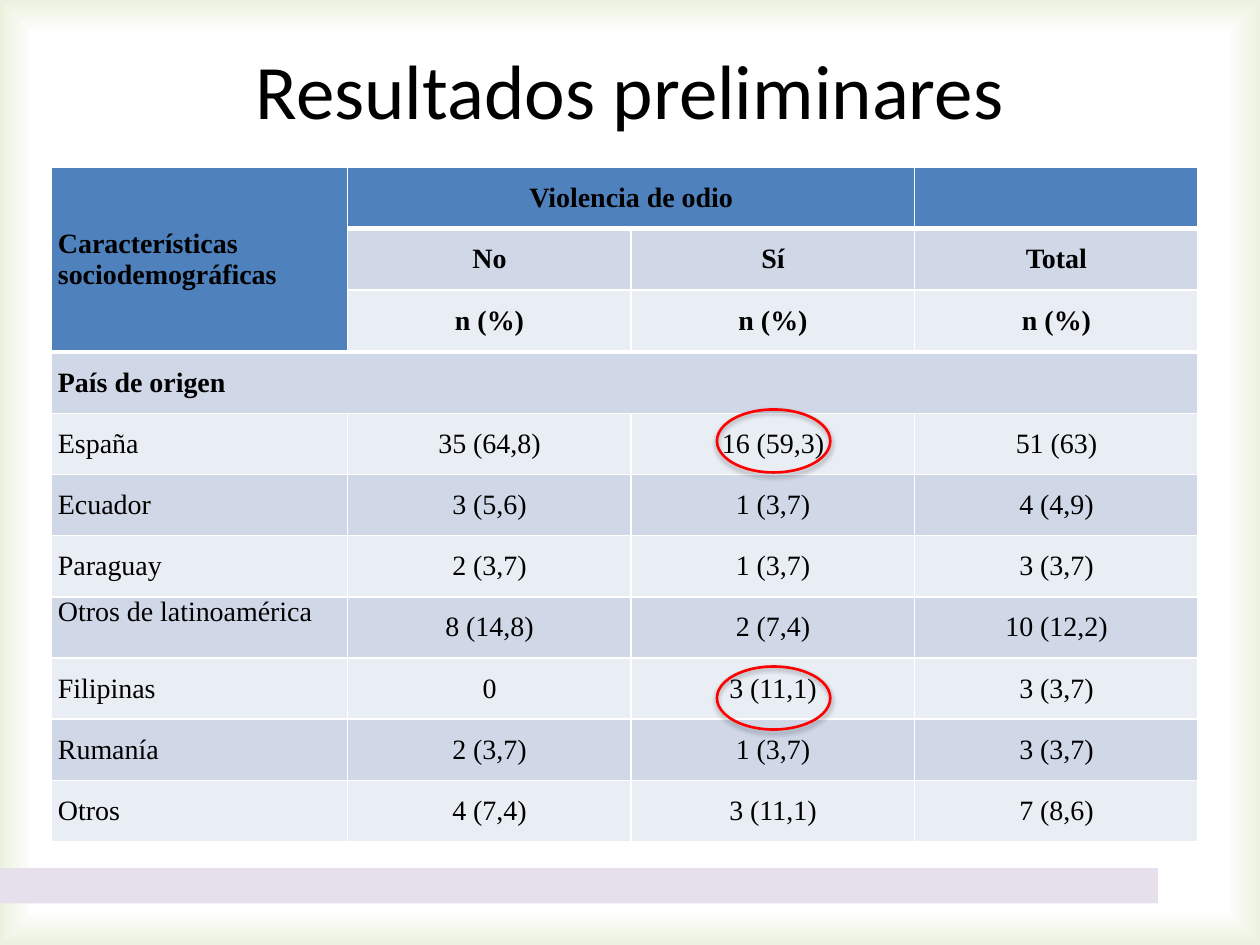
import dataclasses

import pptx
import pptx.dml.color
import pptx.enum.shapes
import pptx.enum.text
import pptx.oxml
import pptx.oxml.ns
import pptx.util

Inches = pptx.util.Inches
Pt = pptx.util.Pt
ALIGN = pptx.enum.text.PP_ALIGN
ANCHOR = pptx.enum.text.MSO_ANCHOR
SHAPE = pptx.enum.shapes.MSO_SHAPE
NS = pptx.oxml.ns.nsdecls("a")

HEAD, DARK, LIGHT = "4F81BD", "D0D8E8", "E9EDF4"
HEAD_ROWS = 3
WIDTHS = [2.35, 2.25, 2.25, 2.25]
ROWS = [
    ["Características sociodemográficas", "Violencia de odio", "", ""],
    ["", "No", "Sí", "Total"],
    ["", "n (%)", "n (%)", "n (%)"],
    ["País de origen", "", "", ""],
    ["España", "35 (64,8)", "16 (59,3)", "51 (63)"],
    ["Ecuador", "3 (5,6)", "1 (3,7)", "4 (4,9)"],
    ["Paraguay", "2 (3,7)", "1 (3,7)", "3 (3,7)"],
    ["Otros de latinoamérica", "8 (14,8)", "2 (7,4)", "10 (12,2)"],
    ["Filipinas", "0", "3 (11,1)", "3 (3,7)"],
    ["Rumanía", "2 (3,7)", "1 (3,7)", "3 (3,7)"],
    ["Otros", "4 (7,4)", "3 (11,1)", "7 (8,6)"],
]
TOP_ROW = 7  # the one row whose label sits at the top of its cell


@dataclasses.dataclass
class Ring:
    left: float
    top: float
    width: float = 0.9
    height: float = 0.5


RINGS = [Ring(5.69, 5.29), Ring(5.69, 3.25)]


def rgb(code: str) -> pptx.dml.color.RGBColor:
    return pptx.dml.color.RGBColor.from_string(code)


def apply(target, values: dict) -> None:
    for name, value in values.items():
        setattr(target, name, value)


def style_font(font, name: str, size: float, bold: bool = False) -> None:
    apply(font, {"name": name, "size": Pt(size), "bold": bold})
    font.color.rgb = rgb("000000")


def paint_back(slide) -> None:
    """Give the slide a white centre that fades to green at the edges."""
    fill = slide.background.fill
    fill.gradient()
    grad = slide.background._cSld.find(".//" + pptx.oxml.ns.qn("a:gradFill"))
    fade = pptx.oxml.parse_xml(
        f'<a:gradFill {NS} rotWithShape="1"><a:gsLst>'
        '<a:gs pos="93000"><a:srgbClr val="FFFFFF"><a:alpha val="70000"/></a:srgbClr></a:gs>'
        '<a:gs pos="100000"><a:srgbClr val="EBF1DE"/></a:gs></a:gsLst>'
        '<a:path path="rect"><a:fillToRect l="50000" t="50000" r="50000" b="50000"/></a:path>'
        "</a:gradFill>")
    grad.getparent().replace(grad, fade)


def add_title(slide, text: str) -> None:
    title = slide.shapes.title
    apply(title, {"left": Inches(0.5), "top": Inches(0.08),
                  "width": Inches(9), "height": Inches(1.25)})
    frame = title.text_frame
    frame.text = text
    frame.vertical_anchor = ANCHOR.MIDDLE
    para = frame.paragraphs[0]
    para.alignment = ALIGN.CENTER
    style_font(para.runs[0].font, "Calibri", 44)


def add_bar(slide) -> None:
    bar = slide.shapes.add_shape(
        SHAPE.RECTANGLE, 0, Inches(6.89), Inches(9.19), Inches(0.28))
    bar.shadow.inherit = False
    bar.fill.solid()
    bar.fill.fore_color.rgb = rgb("E6E0EC")
    bar.line.fill.background()


def set_edges(cell, base: float) -> None:
    """Draw white cell borders, with the bottom one `base` points wide."""
    props = cell._tc.get_or_add_tcPr()
    for spot, (side, width) in enumerate(zip("LRTB", (1, 1, 1, base))):
        props.insert(spot, pptx.oxml.parse_xml(
            f'<a:ln{side} {NS} w="{Pt(width)}"><a:solidFill>'
            f'<a:srgbClr val="FFFFFF"/></a:solidFill></a:ln{side}>'))


def fill_cell(cell, text: str, row: int, col: int) -> None:
    first = col == 0
    header = row == 0 or (first and row < HEAD_ROWS)
    high = first and row == TOP_ROW
    apply(cell, {"margin_left": Inches(0.05), "margin_right": Inches(0.05),
                 "margin_top": 0, "margin_bottom": 0,
                 "vertical_anchor": ANCHOR.TOP if high else ANCHOR.MIDDLE})
    cell.fill.solid()
    cell.fill.fore_color.rgb = rgb(HEAD if header else DARK if row % 2 else LIGHT)
    set_edges(cell, 3 if header else 1)
    if text:
        cell.text = text
        para = cell.text_frame.paragraphs[0]
        para.alignment = ALIGN.LEFT if first else ALIGN.CENTER
        style_font(para.runs[0].font, "Times New Roman", 16, row <= HEAD_ROWS)


def add_grid(slide) -> None:
    grid = slide.shapes.add_table(
        len(ROWS), len(WIDTHS), Inches(0.41), Inches(1.33),
        Inches(sum(WIDTHS)), Inches(5.34)).table
    for col, width in zip(grid.columns, WIDTHS):
        col.width = Inches(width)
    for row, texts in enumerate(ROWS):
        for col, text in enumerate(texts):
            fill_cell(grid.cell(row, col), text, row, col)
    for start, end in [((0, 0), (2, 0)), ((0, 1), (0, 2)), ((3, 0), (3, 3))]:
        grid.cell(*start).merge(grid.cell(*end))


def add_ring(slide, ring: Ring) -> None:
    oval = slide.shapes.add_shape(
        SHAPE.OVAL, Inches(ring.left), Inches(ring.top),
        Inches(ring.width), Inches(ring.height))
    oval.fill.background()
    oval.line.color.rgb = rgb("FF0000")
    oval.line.width = Pt(1.5)
    oval.shadow.inherit = False
    effects = oval._element.spPr.find(pptx.oxml.ns.qn("a:effectLst"))
    effects.append(pptx.oxml.parse_xml(
        f'<a:outerShdw {NS} blurRad="{Pt(3.1)}" dist="{Pt(1.8)}" dir="5400000" '
        'rotWithShape="0"><a:srgbClr val="000000"><a:alpha val="35000"/>'
        "</a:srgbClr></a:outerShdw>"))


def main() -> None:
    deck = pptx.Presentation()
    apply(deck, {"slide_width": Inches(10), "slide_height": Inches(7.5)})
    slide = deck.slides.add_slide(deck.slide_layouts[5])
    paint_back(slide)
    add_bar(slide)
    add_title(slide, "Resultados preliminares")
    add_grid(slide)
    for ring in RINGS:
        add_ring(slide, ring)
    deck.save("out.pptx")


if __name__ == "__main__":
    main()
